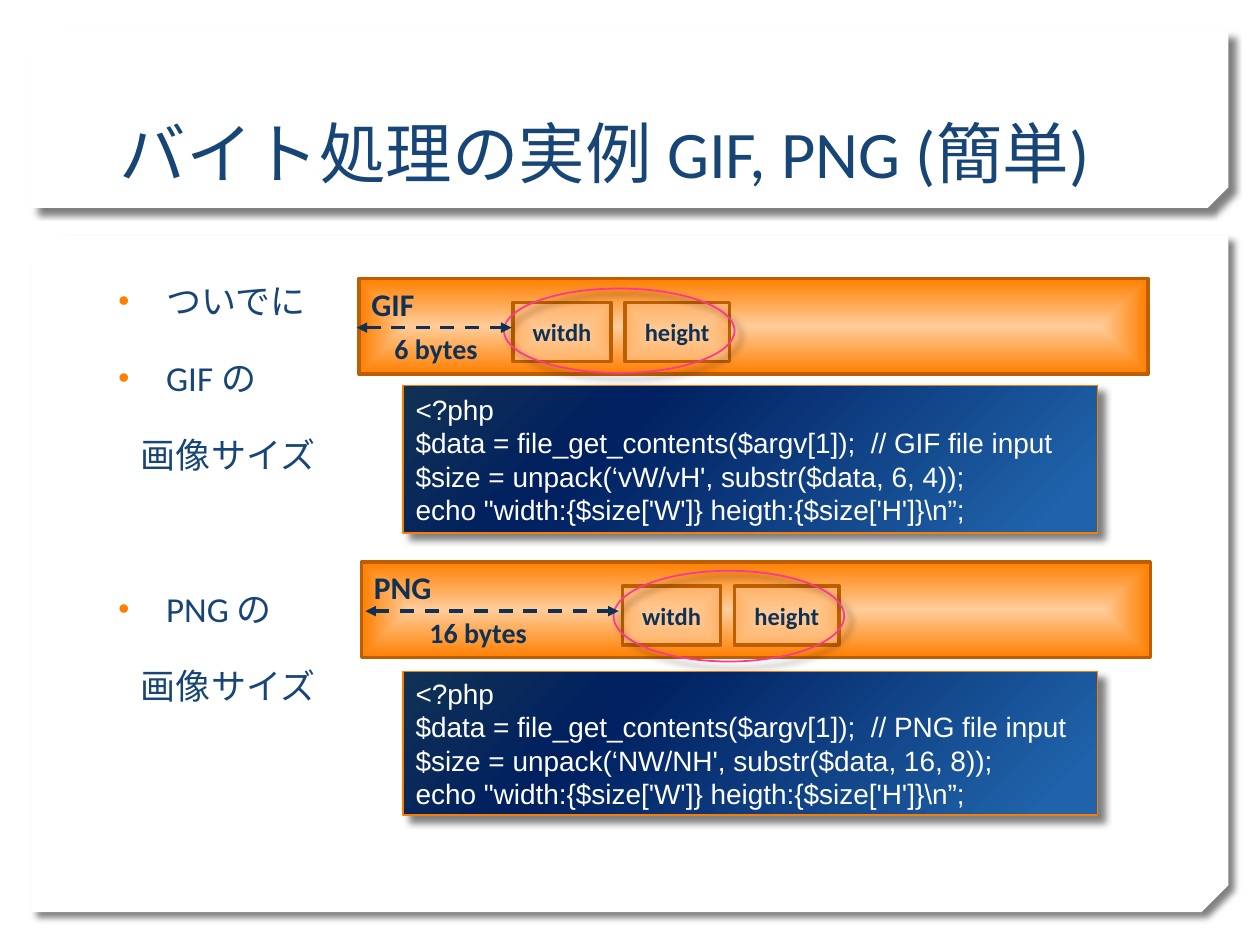
from lxml import etree
from pptx import Presentation
from pptx.dml.color import RGBColor
from pptx.enum.dml import MSO_LINE
from pptx.enum.shapes import MSO_CONNECTOR, MSO_SHAPE
from pptx.enum.text import MSO_ANCHOR, PP_ALIGN
from pptx.oxml import parse_xml
from pptx.oxml.ns import nsdecls, qn
from pptx.util import Inches, Pt

RECTANGLE, OVAL, SNIPPED = MSO_SHAPE.RECTANGLE, MSO_SHAPE.OVAL, MSO_SHAPE.SNIP_2_DIAG_RECTANGLE
TOP, MIDDLE, BOTTOM = MSO_ANCHOR.TOP, MSO_ANCHOR.MIDDLE, MSO_ANCHOR.BOTTOM
LEFT, CENTER = PP_ALIGN.LEFT, PP_ALIGN.CENTER
STRAIGHT, DASH = MSO_CONNECTOR.STRAIGHT, MSO_LINE.DASH

WHITE = RGBColor(0xFF, 0xFF, 0xFF)
BLACK = RGBColor(0x00, 0x00, 0x00)
TITLE_BLUE = RGBColor(0x17, 0x45, 0x76)
DARK_BLUE = RGBColor(0x10, 0x31, 0x54)
NAVY = RGBColor(0x00, 0x20, 0x60)
MID_BLUE = RGBColor(0x20, 0x63, 0xAA)
ORANGE = RGBColor(0xFF, 0x7F, 0x01)
CODE_BORDER = RGBColor(0xFA, 0x7C, 0x00)
BROWN = RGBColor(0xBD, 0x5E, 0x01)
PEACH = RGBColor(0xFF, 0xCC, 0x99)
LIGHT_ORANGE = RGBColor(0xFF, 0xB2, 0x67)
PINK = RGBColor(0xFF, 0x37, 0x8E)

LINEAR = '<a:lin ang="2700000" scaled="0"/>'
CENTERED = '<a:path path="rect"><a:fillToRect l="50000" t="50000" r="50000" b="50000"/></a:path>'
CODE_FILL = ([(0, DARK_BLUE), (30, NAVY), (93, MID_BLUE), (100, MID_BLUE)], LINEAR)
BAR_FILL = ([(0, PEACH), (100, ORANGE)], CENTERED)
FIELD_FILL = ([(0, PEACH), (100, LIGHT_ORANGE)], CENTERED)


def add_box(kind, left, top, width, height, gradient=None, border=None, border_width=1, shadow=False):
    """Add an unfilled or gradient shape with an optional border and drop shadow."""
    shape = slide.shapes.add_shape(kind, Inches(left), Inches(top), Inches(width), Inches(height))
    shape.fill.background()
    if gradient:
        stops, direction = gradient
        stop_xml = "".join(f'<a:gs pos="{position * 1000}"><a:srgbClr val="{color}"/></a:gs>'
                           for position, color in stops)
        properties = shape._element.spPr
        properties.replace(properties.find(qn("a:noFill")), parse_xml(
            f'<a:gradFill {nsdecls("a")} rotWithShape="1"><a:gsLst>{stop_xml}</a:gsLst>{direction}</a:gradFill>'))
    if border:
        shape.line.color.rgb = border
        shape.line.width = Pt(border_width)
    else:
        shape.line.fill.background()
    shape.shadow.inherit = False
    if shadow:
        shape._element.spPr.find(qn("a:effectLst")).append(parse_xml(
            f'<a:outerShdw {nsdecls("a")} blurRad="{Pt(4)}" dist="{Pt(5)}" dir="2700000" algn="tl" '
            f'rotWithShape="0"><a:srgbClr val="{BLACK}"><a:alpha val="50000"/></a:srgbClr></a:outerShdw>'))
    return shape


def write(shape, lines, size, color, font="Calibri", bold=False, align=LEFT, anchor=MIDDLE):
    frame = shape.text_frame
    frame.word_wrap = True
    frame.vertical_anchor = anchor
    for index, line in enumerate(lines):
        paragraph = frame.add_paragraph() if index else frame.paragraphs[0]
        paragraph.alignment = align
        run = paragraph.add_run()
        run.text = line
        run.font.size = Pt(size)
        run.font.name = font
        run.font.bold = bold
        run.font.color.rgb = color
    return frame.paragraphs


presentation = Presentation()
presentation.slide_width = Inches(10)
presentation.slide_height = Inches(7.5)
slide = presentation.slides.add_slide(presentation.slide_layouts[5])

# Background panels, with the snipped corner at the lower right
for top, height, snip in [(1.87, 5.37, 0.04), (0.25, 1.4, 0.117)]:
    panel = add_box(SNIPPED, 0.25, top, 9.5, height, shadow=True)
    panel.fill.solid()
    panel.fill.fore_color.rgb = WHITE
    panel.adjustments[0] = 0
    panel.adjustments[1] = snip
    panel._element.spPr.find(qn("a:xfrm")).set("flipV", "1")

# Title, brought in front of the panels
title = slide.shapes.title
title.left, title.top, title.width, title.height = Inches(0.85), Inches(0.32), Inches(8.29), Inches(1.25)
write(title, ["バイト処理の実例 GIF, PNG (簡単)"], 38, TITLE_BLUE, anchor=BOTTOM)
slide.shapes._spTree.append(title._element)

# Bullet list: text, bulleted, space before
items = [("ついでに", True, 0), ("GIF の", True, 20), ("画像サイズ", False, 20),
         ("PNG の", True, 64), ("画像サイズ", False, 20)]
body = slide.shapes.add_textbox(Inches(0.84), Inches(2.17), Inches(8.29), Inches(4.38))
paragraphs = write(body, [text for text, _, _ in items], 20, TITLE_BLUE, anchor=TOP)
for paragraph, (_, bulleted, space) in zip(paragraphs, items):
    paragraph.space_before = Pt(space)
    paragraph.line_spacing = Pt(24)
    properties = paragraph._p.get_or_add_pPr()
    properties.set("marL", str(Inches(0.38 if bulleted else 0.18)))
    properties.set("indent", str(Inches(-0.38 if bulleted else 0)))
    if bulleted:
        bullet_color = etree.SubElement(properties, qn("a:buClr"))
        etree.SubElement(bullet_color, qn("a:srgbClr"), val=str(ORANGE))
        etree.SubElement(properties, qn("a:buSzPct"), val="90000")
        etree.SubElement(properties, qn("a:buFont"), typeface="Arial")
        etree.SubElement(properties, qn("a:buChar"), char="•")

# Format, bar left and top, first field left, arrow ends, offset label left and width,
# ellipse top and height, code top and height, unpack arguments
formats = [
    ("GIF", 2.85, 2.21, 4.07, (2.83, 4.06), "6 bytes", 3.0, 0.92,
     (2.29, 0.67), (3.06, 1.17), "‘vW/vH', substr($data, 6, 4)"),
    ("PNG", 2.87, 4.46, 4.94, (2.9, 4.91), "16 bytes", 3.27, 1.05,
     (4.53, 0.72), (5.33, 1.14), "‘NW/NH', substr($data, 16, 8)"),
]
for (name, left, top, field_left, arrow_ends, offset, offset_left, offset_width,
     (ellipse_top, ellipse_height), (code_top, code_height), arguments) in formats:
    code = add_box(RECTANGLE, 3.2, code_top, 5.51, code_height, CODE_FILL, CODE_BORDER, shadow=True)
    write(code, ["<?php",
                 f"$data = file_get_contents($argv[1]);  // {name} file input",
                 f"$size = unpack({arguments});",
                 "echo \"width:{$size['W']} heigth:{$size['H']}\\n”;"], 16, WHITE, "Arial")

    bar = add_box(RECTANGLE, left, top, 6.26, 0.76, BAR_FILL, BROWN, 2)
    write(bar, [name], 18, DARK_BLUE, bold=True, anchor=TOP)
    for label, shift, width in [("witdh", 0, 0.78), ("height", 0.89, 0.83)]:
        field = add_box(RECTANGLE, field_left + shift, top + 0.19, width, 0.47, FIELD_FILL, BROWN, 2)
        write(field, [label], 14, DARK_BLUE, bold=True, align=CENTER)
    add_box(OVAL, field_left - 0.07, ellipse_top, 1.83, ellipse_height, border=PINK, shadow=True)

    start, end = arrow_ends
    arrow_top = Inches(top + 0.39)
    arrow = slide.shapes.add_connector(STRAIGHT, Inches(start), arrow_top, Inches(end), arrow_top)
    arrow.line.color.rgb = DARK_BLUE
    arrow.line.width = Pt(2)
    arrow.line.dash_style = DASH
    for tag in ("a:headEnd", "a:tailEnd"):
        etree.SubElement(arrow.line._ln, qn(tag), type="triangle")
    etree.SubElement(arrow._element.spPr, qn("a:effectLst"))

    offset_label = slide.shapes.add_textbox(Inches(offset_left), Inches(top + 0.36),
                                            Inches(offset_width), Inches(0.39))
    write(offset_label, [offset], 16, DARK_BLUE, bold=True, align=CENTER)

presentation.save("out.pptx")
